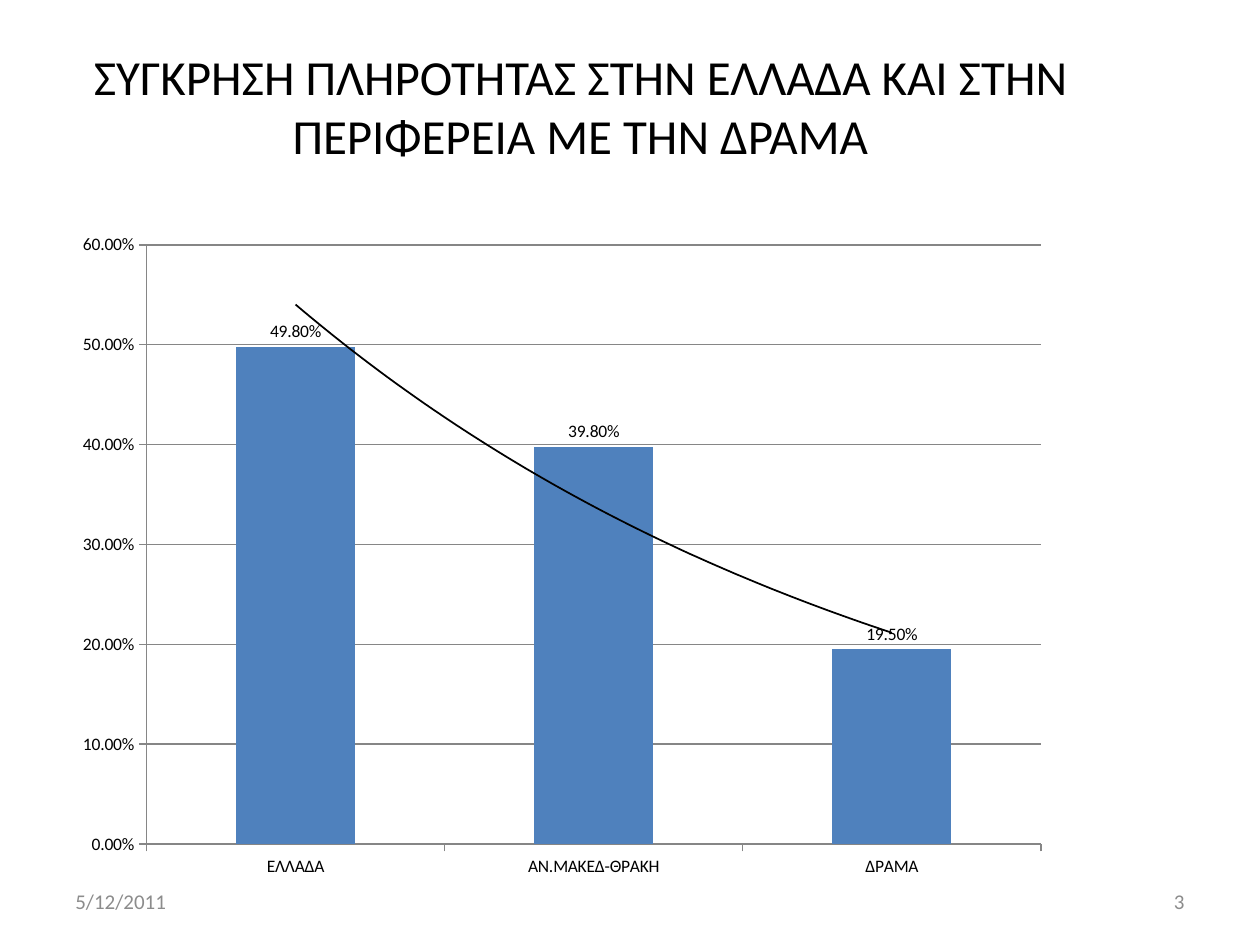
import pptx
import pptx.chart.data
import pptx.dml.color
import pptx.enum.chart
import pptx.enum.text
import pptx.oxml
import pptx.oxml.ns
import pptx.util
from pptx.util import Inches

FONT = "Calibri"
BLACK, GREY, BLUE, AXIS = "000000", "8C8C8C", "4F81BD", "868686"
PERCENT = "0.00%"
ALIGN = pptx.enum.text.PP_ALIGN

# text, left, top, width, height, size, colour, alignment
TEXTS = [
    ("ΣΥΓΚΡΗΣΗ ΠΛΗΡΟΤΗΤΑΣ ΣΤΗΝ ΕΛΛΑΔΑ ΚΑΙ ΣΤΗΝ ΠΕΡΙΦΕΡΕΙΑ ΜΕ ΤΗΝ ΔΡΑΜΑ",
     0.51, 0.21, 8.19, 1.25, 28, BLACK, ALIGN.CENTER),
    ("5/12/2011", 0.5, 6.95, 2.33, 0.4, 12, GREY, ALIGN.LEFT),
    ("3", 7.17, 6.95, 2.33, 0.4, 12, GREY, ALIGN.RIGHT),
]
COMPLETENESS = {"ΕΛΛΑΔΑ": 0.498, "ΑΝ.ΜΑΚΕΔ-ΘΡΑΚΗ": 0.398, "ΔΡΑΜΑ": 0.195}


def rgb(color):
    return pptx.dml.color.RGBColor.from_string(color)


def style_font(font, size, color):
    font.name = FONT
    font.size = pptx.util.Pt(size)
    font.color.rgb = rgb(color)


def style_line(line):
    line.color.rgb = rgb(AXIS)
    line.width = pptx.util.Pt(0.75)


def add_text(slide, text, left, top, width, height, size, color, align):
    s = slide.shapes.add_textbox(*map(Inches, (left, top, width, height)))
    tf = s.text_frame
    tf.word_wrap = True
    tf.vertical_anchor = pptx.enum.text.MSO_ANCHOR.MIDDLE
    tf.text = text
    p = tf.paragraphs[0]
    p.alignment = align
    style_font(p.runs[0].font, size, color)


def add_exponential_trend(series):
    trend = pptx.oxml.parse_xml(
        f'<c:trendline {pptx.oxml.ns.nsdecls("c", "a")}>'
        f'<c:spPr><a:ln w="12700"><a:solidFill><a:srgbClr val="{BLACK}"/>'
        '</a:solidFill></a:ln></c:spPr><c:trendlineType val="exp"/>'
        '<c:dispRSqr val="0"/><c:dispEq val="0"/></c:trendline>')
    series._element.find(pptx.oxml.ns.qn("c:cat")).addprevious(trend)


def add_column_chart(slide):
    data = pptx.chart.data.CategoryChartData(number_format=PERCENT)
    data.categories = list(COMPLETENESS)
    data.add_series("Series 1", list(COMPLETENESS.values()))
    chart = slide.shapes.add_chart(
        pptx.enum.chart.XL_CHART_TYPE.COLUMN_CLUSTERED,
        Inches(0.5), Inches(1.76), Inches(7.92), Inches(5.3), data).chart
    chart.has_title = False
    chart.has_legend = False
    style_font(chart.font, 10, BLACK)

    for axis in (chart.category_axis, chart.value_axis):
        axis.major_tick_mark = pptx.enum.chart.XL_TICK_MARK.OUTSIDE
        style_line(axis.format.line)
    axis = chart.value_axis
    axis.minimum_scale, axis.maximum_scale, axis.major_unit = 0, 0.6, 0.1
    axis.tick_labels.number_format = PERCENT
    axis.tick_labels.number_format_is_linked = False
    axis.has_major_gridlines = True
    style_line(axis.major_gridlines.format.line)

    plot = chart.plots[0]
    plot.gap_width = 150
    plot.vary_by_categories = False
    series = plot.series[0]
    series.format.fill.solid()
    series.format.fill.fore_color.rgb = rgb(BLUE)
    labels = series.data_labels
    labels.show_value = True
    labels.number_format = PERCENT
    labels.number_format_is_linked = False
    labels.position = pptx.enum.chart.XL_LABEL_POSITION.OUTSIDE_END
    style_font(labels.font, 10, BLACK)
    add_exponential_trend(series)


def main():
    prs = pptx.Presentation()
    prs.slide_width, prs.slide_height = Inches(10), Inches(7.5)
    slide = prs.slides.add_slide(prs.slide_layouts[6])
    add_column_chart(slide)
    for item in TEXTS:
        add_text(slide, *item)
    prs.save("out.pptx")


if __name__ == "__main__":
    main()
